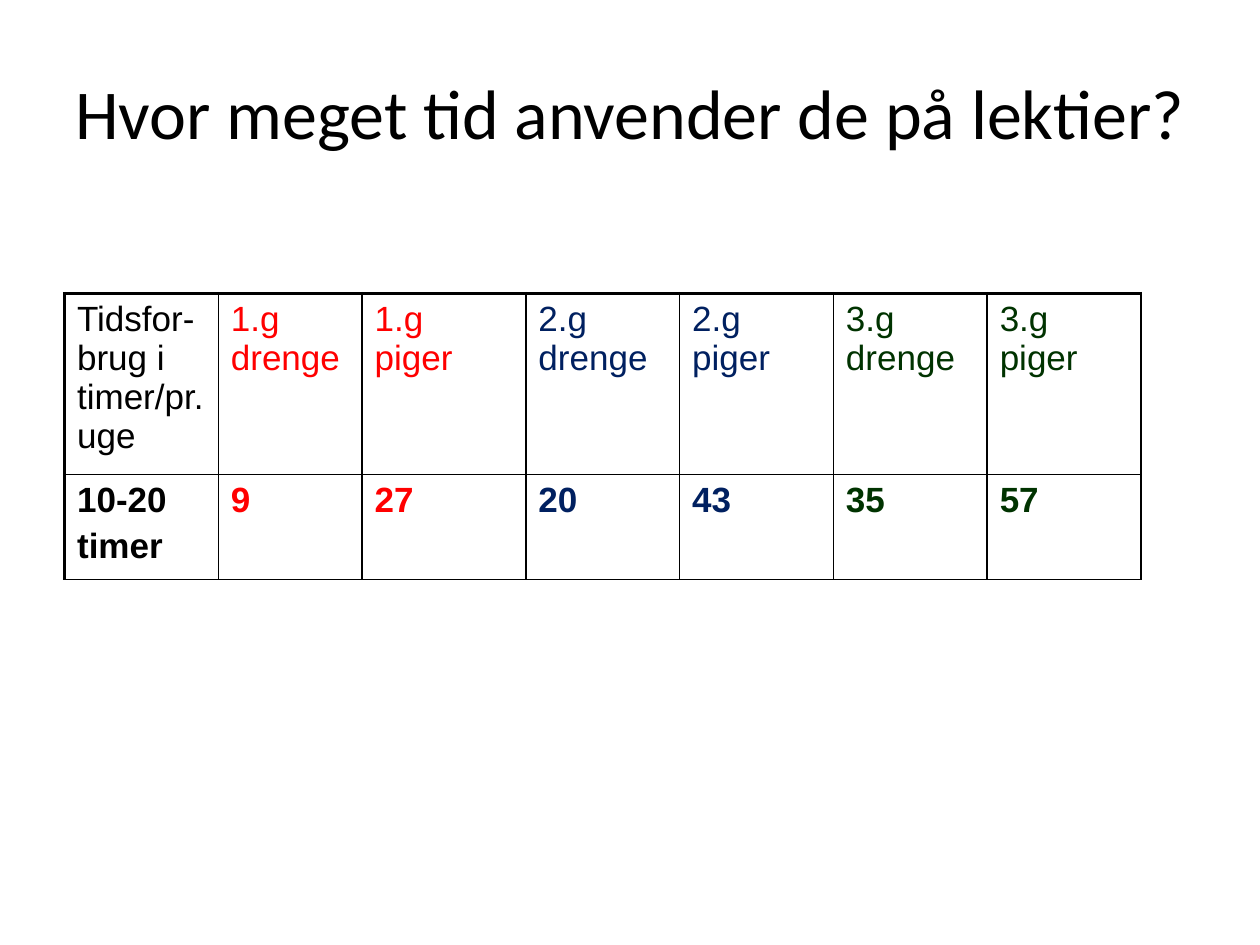
from lxml import etree
from pptx import Presentation
from pptx import util as u
from pptx.dml.color import RGBColor
from pptx.enum import text
from pptx.oxml import ns

BLACK = RGBColor(0x00, 0x00, 0x00)
RED = RGBColor(0xFF, 0x00, 0x00)
NAVY = RGBColor(0x00, 0x20, 0x60)
GREEN = RGBColor(0x00, 0x33, 0x00)


def style(par, font, size, color, bold=False):
    for run in par.runs:
        run.font.name = font
        run.font.size = u.Pt(size)
        run.font.bold = bold
        run.font.color.rgb = color


def border(cell, side, width):
    line = etree.SubElement(cell._tc.get_or_add_tcPr(), ns.qn("a:ln" + side))
    line.set("w", str(u.Pt(width)))
    fill = etree.SubElement(line, ns.qn("a:solidFill"))
    etree.SubElement(fill, ns.qn("a:srgbClr")).set("val", str(BLACK))


deck = Presentation()
deck.slide_width = u.Cm(25.4)
deck.slide_height = u.Cm(19.05)
slide = deck.slides.add_slide(deck.slide_layouts[6])

# Title
title = slide.shapes.add_textbox(u.Cm(1.27), u.Cm(0.76), u.Cm(22.86), u.Cm(3.18))
frame = title.text_frame
frame.word_wrap = True
frame.vertical_anchor = text.MSO_ANCHOR.MIDDLE
frame.text = "Hvor meget tid anvender de på lektier?"
frame.paragraphs[0].line_spacing = 0.9
style(frame.paragraphs[0], "Calibri", 40, BLACK)

# Table of weekly homework hours
rows = [
    ["Tidsfor-brug i timer/pr. uge", "1.g drenge", "1.g\vpiger", "2.g drenge",
     "2.g piger", "3.g drenge", "3.g piger"],
    ["10-20\ntimer", "9", "27", "20", "43", "35", "57"],
]
colors = [BLACK, RED, RED, NAVY, NAVY, GREEN, GREEN]
widths = [3.1, 2.9, 3.3, 3.1, 3.1, 3.1, 3.1]
heights = [3.64, 2.12]

table = slide.shapes.add_table(len(rows), len(widths), u.Cm(1.3), u.Cm(5.92),
                               u.Cm(sum(widths)), u.Cm(sum(heights))).table
table.first_row = False
table.horz_banding = False
for col, width in zip(table.columns, widths):
    col.width = u.Cm(width)
for row, height in zip(table.rows, heights):
    row.height = u.Cm(height)

for r, words in enumerate(rows):
    for c, word in enumerate(words):
        cell = table.cell(r, c)
        cell.text_frame.text = word
        for par in cell.text_frame.paragraphs:
            par.space_before = u.Pt(4)
            style(par, "Arial", 20, colors[c], bold=r > 0)
        # Thick outer edge at left and top, thin lines elsewhere
        border(cell, "L", 2.25 if c == 0 else 1)
        border(cell, "R", 1)
        border(cell, "T", 2.25 if r == 0 else 1)
        border(cell, "B", 1)
        cell.fill.background()

deck.save("out.pptx")
